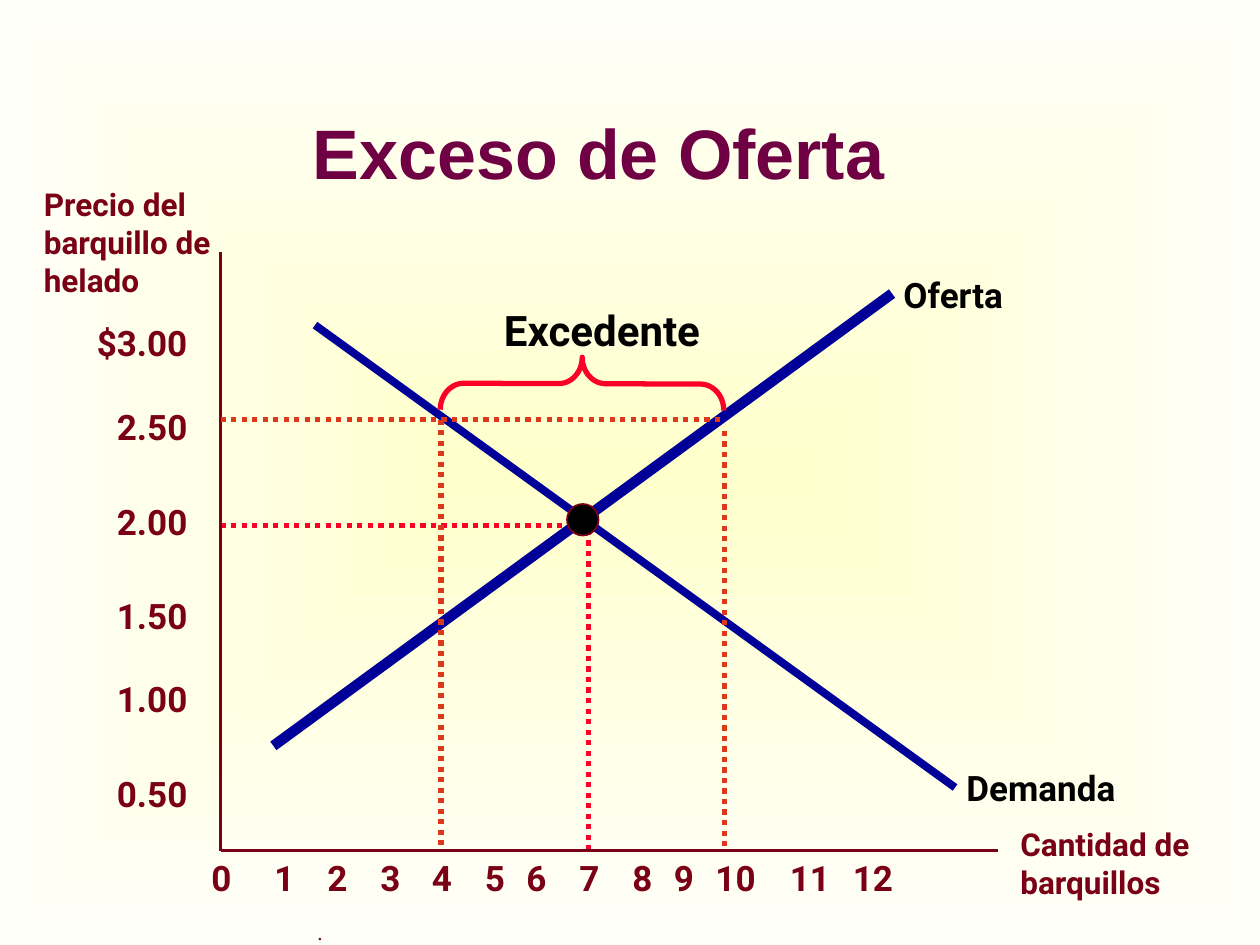
from lxml.etree import SubElement
from pptx import Presentation
from pptx.dml.color import RGBColor
from pptx.enum.dml import MSO_LINE
from pptx.enum.shapes import MSO_CONNECTOR, MSO_SHAPE
from pptx.enum.text import MSO_ANCHOR, MSO_AUTO_SIZE, PP_ALIGN
from pptx.oxml.ns import qn
from pptx.util import Inches, Pt

COLORS = {
    "center": "FFFFCC", "edge": "FFFFFA", "maroon": "790015", "title": "6E0043",
    "curve": "000099", "red": "FC0128", "orange": "DE381C", "black": "000000",
}
QUANTITY_LEFTS = [1.58, 2.08, 2.5, 2.92, 3.33, 3.75, 4.08, 4.5, 4.92, 5.25, 5.58, 6.17, 6.67]
PRICE_TOPS = {"2.50": 3.17, "2.00": 3.92, "1.50": 4.67, "1.00": 5.33, "0.50": 6.08}
AXIS_X, AXIS_Y = 1.75, 6.75


def rgb(name):
    return RGBColor.from_string(COLORS[name])


def set_background(s):
    """Gradient that spreads from the middle of the slide to its edges."""
    fill = s.background.fill
    fill.gradient()
    for stop, name, position in zip(fill.gradient_stops, ("center", "edge"), (0, 1)):
        stop.color.rgb = rgb(name)
        stop.position = position
    grad = s.element.find(".//" + qn("a:gradFill"))
    for lin in grad.findall(qn("a:lin")):
        grad.remove(lin)
    shade = SubElement(grad, qn("a:path"), {"path": "shape"})
    SubElement(shade, qn("a:fillToRect"), dict.fromkeys("ltrb", "50000"))


def add_text(s, text, box, size=20, color="maroon", font="Roboto", bold=True,
             align=PP_ALIGN.LEFT, margins=(0.1, 0.05), **frame):
    sp = s.shapes.add_textbox(*map(Inches, box))
    tf = sp.text_frame
    side, end = map(Inches, margins)
    settings = {
        "word_wrap": True, "auto_size": MSO_AUTO_SIZE.SHAPE_TO_FIT_TEXT,
        "margin_left": side, "margin_right": side,
        "margin_top": end, "margin_bottom": end,
    }
    for key, value in {**settings, **frame}.items():
        setattr(tf, key, value)
    p = tf.paragraphs[0]
    p.alignment = align
    r = p.add_run()
    r.text = text
    for key, value in {"name": font, "size": Pt(size), "bold": bold}.items():
        setattr(r.font, key, value)
    r.font.color.rgb = rgb(color)


def add_curve_label(s, text, box, size=20):
    add_text(s, text, box, size, "black", margins=(0, 0), word_wrap=False)


def add_line(s, start, end, color, width, dash=None):
    line = s.shapes.add_connector(MSO_CONNECTOR.STRAIGHT, *map(Inches, start + end))
    line.line.color.rgb = rgb(color)
    line.line.width = Pt(width)
    if dash:
        line.line.dash_style = dash
    SubElement(line._element.spPr, qn("a:effectLst"))


def add_guide(s, start, end, color):
    add_line(s, start, end, color, 3, MSO_LINE.ROUND_DOT)


def add_marker(s, kind, box, color, width, fill=None):
    sp = s.shapes.add_shape(kind, *map(Inches, box))
    sp.shadow.inherit = False
    if fill:
        sp.fill.solid()
        sp.fill.fore_color.rgb = rgb(fill)
    else:
        sp.fill.background()
    sp.line.color.rgb = rgb(color)
    sp.line.width = Pt(width)
    return sp


def add_axes(s):
    add_line(s, (AXIS_X, 2), (AXIS_X, AXIS_Y), "maroon", 2.25)
    add_line(s, (AXIS_X, AXIS_Y), (7.92, AXIS_Y), "maroon", 2.25)
    add_text(s, "Precio del barquillo de helado", (0.25, 1.42, 1.67, 1), 18)
    add_text(s, "Cantidad de barquillos", (8, 6.5, 1.67, 1), 18)


def add_scales(s):
    for quantity, left in enumerate(QUANTITY_LEFTS):
        width = 0.5 if quantity < 9 else 0.58
        add_text(s, str(quantity), (left, AXIS_Y, width, 0.43))
    add_text(s, "$3.00", (0.67, 2.5, 1, 0.43))
    for price, top in PRICE_TOPS.items():
        add_text(s, price, (0.83, top, 0.83, 0.43))


def add_surplus(s):
    add_guide(s, (AXIS_X, 3.33), (5.75, 3.33), "orange")
    add_guide(s, (3.5, 3.33), (3.5, AXIS_Y), "orange")
    add_guide(s, (5.75, 3.42), (5.75, AXIS_Y), "orange")
    brace = add_marker(s, MSO_SHAPE.LEFT_BRACE, (4.41, 1.92, 0.42, 2.25), "red", 3)
    brace.rotation = 90.2
    brace.adjustments[0] = 0.44
    add_curve_label(s, "Excedente", (4, 2.42, 1.74, 0.4), 24)


def main():
    prs = Presentation()
    prs.slide_width, prs.slide_height = Inches(10), Inches(7.5)
    s = prs.slides.add_slide(prs.slide_layouts[6])
    set_background(s)
    add_text(s, ".", (0, 7, 5.08, 0.5), 12, font="Times New Roman", bold=False,
             align=PP_ALIGN.CENTER, margins=(0.1, 0), word_wrap=False,
             auto_size=MSO_AUTO_SIZE.NONE, vertical_anchor=MSO_ANCHOR.BOTTOM)
    for end in ((AXIS_X, 4.17), (4.67, AXIS_Y)):
        add_guide(s, end, (4.67, 4.17), "red")
    add_axes(s)
    add_line(s, (2.17, 5.92), (7.08, 2.33), "curve", 6)
    add_line(s, (2.5, 2.58), (7.58, 6.25), "curve", 4.5)
    add_scales(s)
    add_marker(s, MSO_SHAPE.OVAL, (4.5, 4, 0.25, 0.25), "maroon", 1, "black")
    add_curve_label(s, "Oferta", (7.17, 2.17, 0.89, 0.33))
    add_curve_label(s, "Demanda", (7.67, 6.08, 1.33, 0.33))
    add_surplus(s)
    add_text(s, "Exceso de Oferta", (0.5, 0.58, 8.5, 1.25), 40, "title", "Arial",
             align=PP_ALIGN.CENTER, auto_size=MSO_AUTO_SIZE.NONE,
             vertical_anchor=MSO_ANCHOR.MIDDLE)
    prs.save("out.pptx")


if __name__ == "__main__":
    main()
